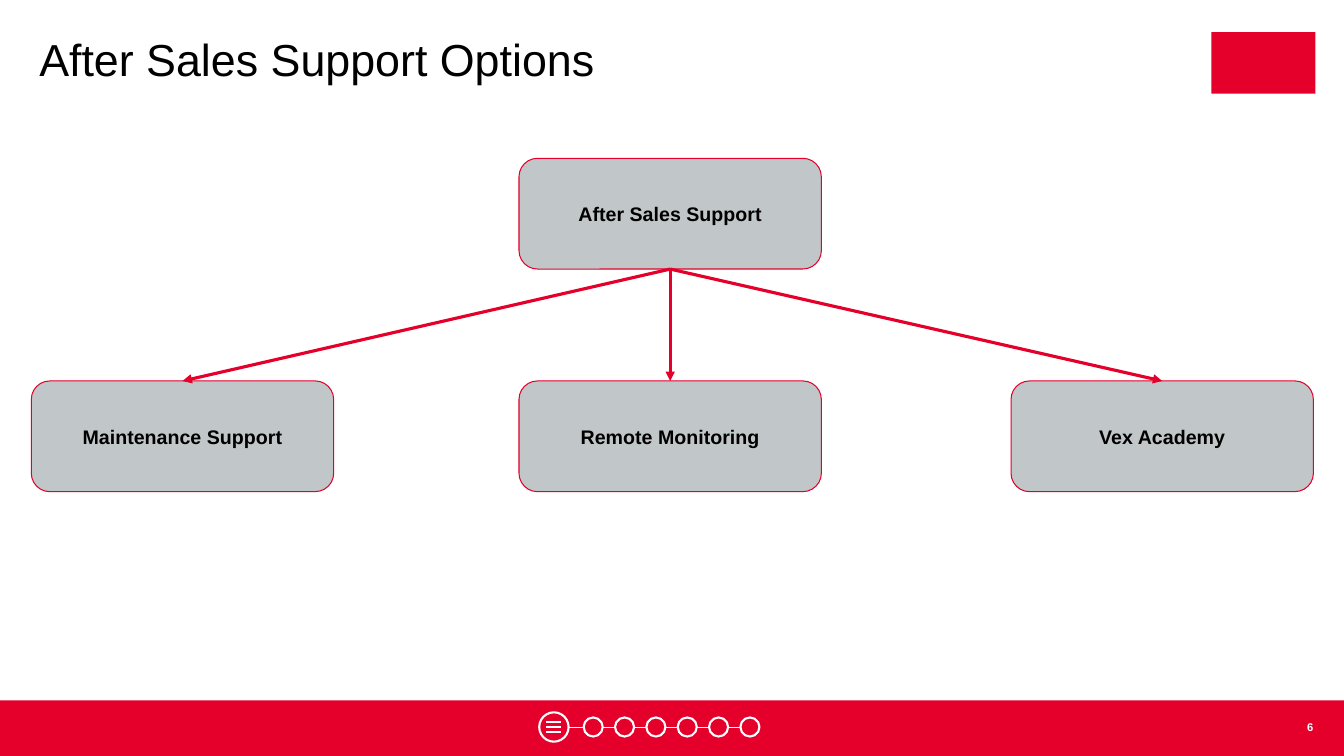
from lxml import etree
from pptx import Presentation
from pptx import util as u
from pptx.dml.color import RGBColor
from pptx.enum import shapes, text
from pptx.oxml.ns import qn

RED, GREY, WHITE, BLACK = "E4002B", "C1C6C8", "FFFFFF", "000000"
BOX_W, BOX_H = 7.62, 2.79
ROOT_X, ROOT_Y, OPTION_Y = 13.08, 3.99, 9.6
OPTIONS = [(0.79, "Maintenance Support"), (ROOT_X, "Remote Monitoring"), (25.48, "Vex Academy")]
NAV_Y = 18.32


def paint(color_format, color):
    color_format.rgb = RGBColor.from_string(color)


def format_text(tf, size, color, bold, align, insets):
    tf.word_wrap = True
    tf.auto_size = text.MSO_AUTO_SIZE.NONE
    tf.margin_left, tf.margin_top, tf.margin_right, tf.margin_bottom = map(u.Cm, insets)
    p = tf.paragraphs[0]
    p.alignment = align
    r = p.runs[0]
    r.font.name, r.font.size, r.font.bold = "Arial", u.Pt(size), bold
    paint(r.font.color, color)


def add_shape(s, kind, x, y, w, h, fill=None, line=None, width=0.75):
    sp = s.shapes.add_shape(kind, *map(u.Cm, (x, y, w, h)))
    sp.shadow.inherit = False
    if fill:
        sp.fill.solid()
        paint(sp.fill.fore_color, fill)
    else:
        sp.fill.background()
    if line:
        paint(sp.line.color, line)
        sp.line.width = u.Pt(width)
    else:
        sp.line.fill.background()
    return sp


def add_line(s, x1, y1, x2, y2, color, width):
    line = s.shapes.add_connector(shapes.MSO_CONNECTOR.STRAIGHT, *map(u.Cm, (x1, y1, x2, y2)))
    paint(line.line.color, color)
    line.line.width = u.Pt(width)
    etree.SubElement(line._element.spPr, qn("a:effectLst"))
    return line


def add_arrow(s, start, end):
    line = add_line(s, 0, 0, 1, 1, RED, 2.25)
    line.begin_connect(start, 2)
    line.end_connect(end, 0)
    etree.SubElement(line.line._get_or_add_ln(), qn("a:tailEnd"), type="triangle")


def add_box(s, x, y, label):
    sp = add_shape(s, shapes.MSO_SHAPE.ROUNDED_RECTANGLE, x, y, BOX_W, BOX_H, GREY, RED)
    tf = sp.text_frame
    tf.text = label
    tf.vertical_anchor = text.MSO_ANCHOR.MIDDLE
    format_text(tf, 14, BLACK, True, text.PP_ALIGN.CENTER, [0.25] * 4)
    return sp


def add_title(s, label):
    sp = s.shapes.title
    sp.left, sp.top, sp.width, sp.height = map(u.Cm, (0.79, 0.86, 28.9, 1.55))
    tf = sp.text_frame
    tf.text = label
    tf.vertical_anchor = text.MSO_ANCHOR.TOP
    format_text(tf, 32, BLACK, False, text.PP_ALIGN.LEFT, (0.2, 0.1, 0.2, 0))
    tf.paragraphs[0].line_spacing = 0.9


def add_navigation(s):
    oval = shapes.MSO_SHAPE.OVAL
    add_shape(s, oval, 13.59, NAV_Y - 0.37, 0.74, 0.74, None, WHITE, 1.5)
    for offset in (-0.13, 0, 0.13):
        add_line(s, 13.77, NAV_Y + offset, 14.13, NAV_Y + offset, WHITE, 1.25)
    previous = 14.33
    for i in range(6):
        x = 14.71 + 0.79 * i
        add_line(s, previous, NAV_Y, x, NAV_Y, WHITE, 0.75)
        add_shape(s, oval, x, NAV_Y - 0.24, 0.48, 0.48, RED, WHITE, 1.5)
        previous = x + 0.48


def add_page_number(s, number):
    tf = s.shapes.add_textbox(*map(u.Cm, (25.48, 17.96, 7.62, 0.74))).text_frame
    tf.text = number
    tf.vertical_anchor = text.MSO_ANCHOR.MIDDLE
    format_text(tf, 8, WHITE, True, text.PP_ALIGN.RIGHT, (0.25, 0.13, 0, 0.13))


def main():
    prs = Presentation()
    prs.slide_width, prs.slide_height = u.Cm(33.87), u.Cm(19.05)
    s = prs.slides.add_slide(prs.slide_layouts[5])
    add_shape(s, shapes.MSO_SHAPE.RECTANGLE, 0, 17.65, 33.87, 1.4, RED)
    add_navigation(s)
    add_page_number(s, "6")
    add_title(s, "After Sales Support Options")
    add_shape(s, shapes.MSO_SHAPE.RECTANGLE, 30.53, 0.81, 2.62, 1.55, RED)
    root = add_box(s, ROOT_X, ROOT_Y, "After Sales Support")
    options = [add_box(s, x, OPTION_Y, label) for x, label in OPTIONS]
    for option in options:
        add_arrow(s, root, option)
    prs.save("out.pptx")


if __name__ == "__main__":
    main()
